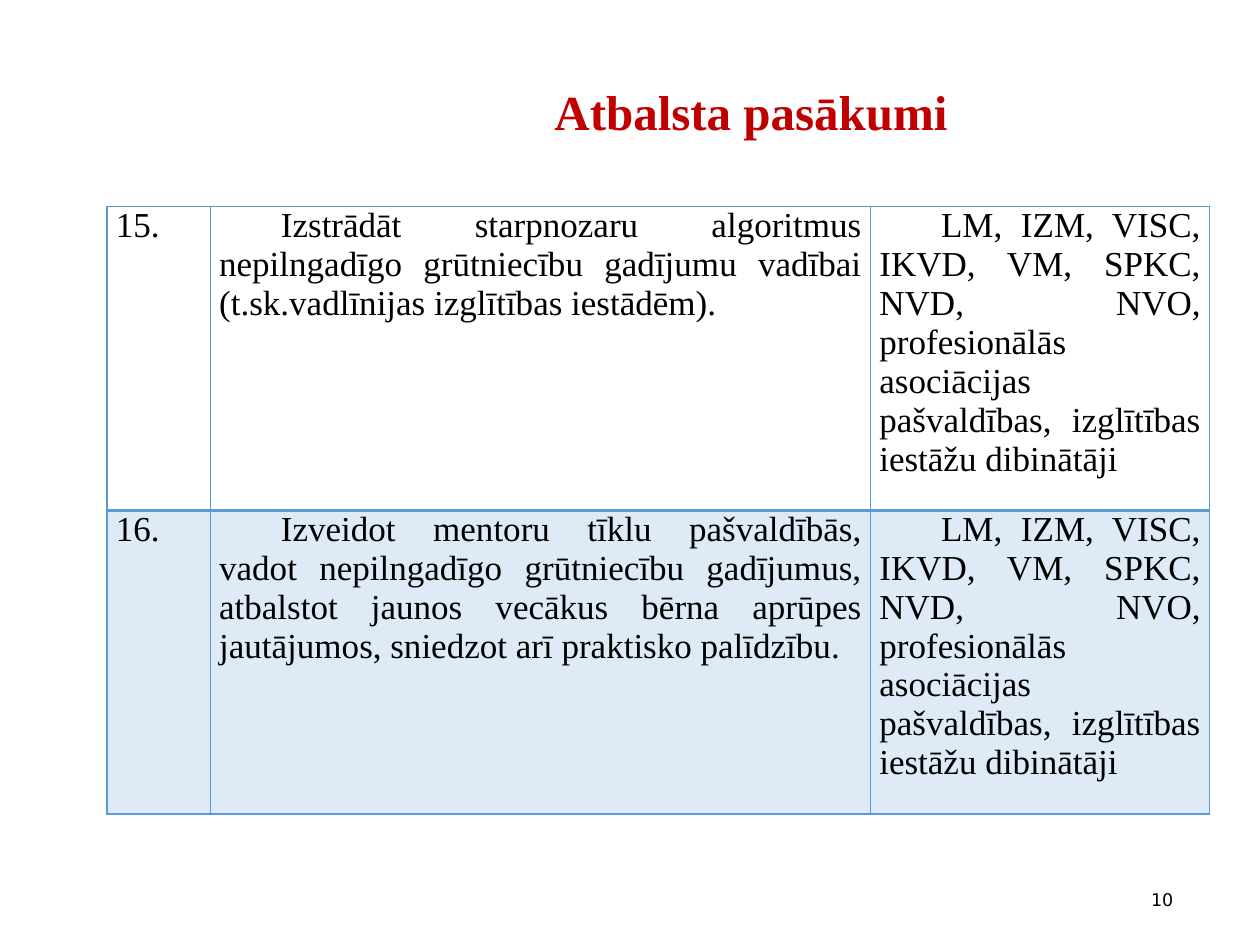
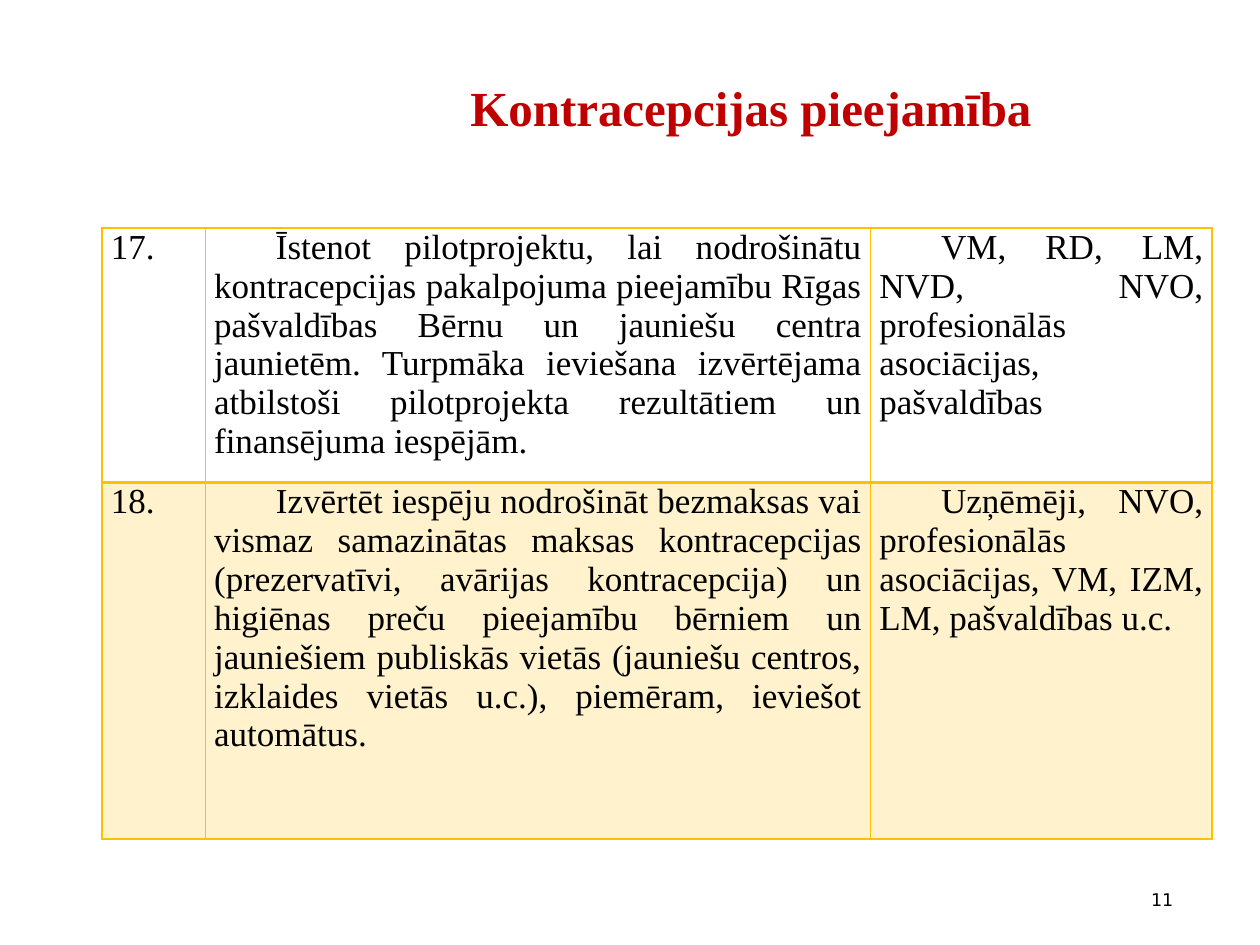
from pptx import Presentation
from pptx.dml.color import RGBColor
from pptx.enum.text import MSO_ANCHOR, MSO_AUTO_SIZE, PP_ALIGN
from pptx.oxml import parse_xml
from pptx.oxml.ns import nsdecls
from pptx.util import Inches, Pt

RED = RGBColor(0xC0, 0x00, 0x00)
BLACK = RGBColor(0x00, 0x00, 0x00)
BLUE = RGBColor(0x5B, 0x9B, 0xD5)
PALE_BLUE = RGBColor(0xDE, 0xEB, 0xF7)
GOLD = RGBColor(0xFF, 0xC0, 0x00)
PALE_GOLD = RGBColor(0xFF, 0xF2, 0xCC)
SERIF = "Times New Roman"
SANS = "DejaVu Sans"

SUPPORT_PARTNERS = ("LM, IZM, VISC, IKVD, VM, SPKC, NVD, NVO, profesionālās asociācijas "
                    "pašvaldības, izglītības iestāžu dibinātāji")
SUPPORT_ROWS = [
    ("15.", "Izstrādāt starpnozaru algoritmus nepilngadīgo grūtniecību gadījumu vadībai "
     "(t.sk.vadlīnijas izglītības iestādēm).", SUPPORT_PARTNERS),
    ("16.", "Izveidot mentoru tīklu pašvaldībās, vadot nepilngadīgo grūtniecību gadījumus, "
     "atbalstot jaunos vecākus bērna aprūpes jautājumos, sniedzot arī praktisko palīdzību.",
     SUPPORT_PARTNERS),
]
ACCESS_ROWS = [
    ("17.", "Īstenot pilotprojektu, lai nodrošinātu kontracepcijas pakalpojuma pieejamību "
     "Rīgas pašvaldības Bērnu un jauniešu centra jaunietēm. Turpmāka ieviešana izvērtējama "
     "atbilstoši pilotprojekta rezultātiem un finansējuma iespējām.",
     "VM, RD, LM, NVD, NVO, profesionālās asociācijas, pašvaldības"),
    ("18.", "Izvērtēt iespēju nodrošināt bezmaksas vai vismaz samazinātas maksas "
     "kontracepcijas (prezervatīvi, avārijas kontracepcija) un higiēnas preču pieejamību "
     "bērniem un jauniešiem publiskās vietās (jauniešu centros, izklaides vietās u.c.), "
     "piemēram, ieviešot automātus.",
     "Uzņēmēji, NVO, profesionālās asociācijas, VM, IZM, LM, pašvaldības u.c."),
]


def write(tf, text, size=20, font=SERIF, color=BLACK, bold=False,
          align=PP_ALIGN.JUSTIFY, indent=0, spacing=None):
    p = tf.paragraphs[0]
    p.alignment = align
    if spacing:
        p.line_spacing = spacing
    if indent:
        pPr = p._p.get_or_add_pPr()
        pPr.set("marL", "0")
        pPr.set("indent", str(Inches(indent)))
    r = p.add_run()
    r.text = text
    r.font.name = font
    r.font.size = Pt(size)
    r.font.bold = bold
    r.font.color.rgb = color


def add_title(s, text, top, height):
    sp = s.shapes.title
    sp.left, sp.top, sp.width, sp.height = map(Inches, (2.5, top, 6.92, height))
    tf = sp.text_frame
    tf.auto_size = MSO_AUTO_SIZE.NONE
    tf.vertical_anchor = MSO_ANCHOR.TOP
    write(tf, text, size=28, color=RED, bold=True, align=PP_ALIGN.CENTER, spacing=0.9)


def add_number(s, number):
    tf = s.shapes.add_textbox(*map(Inches, (8.56, 6.94, 0.85, 0.4))).text_frame
    tf.word_wrap = True
    tf.vertical_anchor = MSO_ANCHOR.MIDDLE
    write(tf, str(number), size=10, font=SANS, align=PP_ALIGN.RIGHT)


def set_borders(cell, color, top, bottom):
    tcPr = cell._tc.get_or_add_tcPr()
    widths = {"lnL": 1, "lnR": 1, "lnT": top, "lnB": bottom}
    for position, (side, width) in enumerate(widths.items()):
        tcPr.insert(position, parse_xml(
            f'<a:{side} {nsdecls("a")} w="{Pt(width)}"><a:solidFill>'
            f'<a:srgbClr val="{color}"/></a:solidFill></a:{side}>'))


def add_measures(s, rows, left, top, widths, heights, line, tint):
    table = s.shapes.add_table(len(rows), len(widths), Inches(left), Inches(top),
                               Inches(sum(widths)), Inches(sum(heights))).table
    table.first_row = table.horz_banding = False
    for column, width in zip(table.columns, widths):
        column.width = Inches(width)
    for i, (row, height) in enumerate(zip(rows, heights)):
        table.rows[i].height = Inches(height)
        for j, text in enumerate(row):
            cell = table.cell(i, j)
            cell.margin_left = cell.margin_right = Inches(0.07)
            cell.margin_top = cell.margin_bottom = 0
            if i % 2:
                cell.fill.solid()
                cell.fill.fore_color.rgb = tint
            else:
                cell.fill.background()
            set_borders(cell, line, top=2 if i else 1, bottom=1 if i else 2)
            write(cell.text_frame, text, indent=0.49 if j else 0)


def main():
    prs = Presentation()
    prs.slide_width, prs.slide_height = Inches(10), Inches(7.5)
    title_only = prs.slide_layouts[5]

    s = prs.slides.add_slide(title_only)
    add_title(s, "Atbalsta pasākumi", 0.65, 0.74)
    add_measures(s, SUPPORT_ROWS, 0.85, 1.64, (0.82, 5.24, 2.69), (2.41, 2.41),
                 BLUE, PALE_BLUE)
    add_number(s, 10)

    s = prs.slides.add_slide(title_only)
    add_title(s, "Kontracepcijas pieejamība", 0.62, 0.78)
    add_measures(s, ACCESS_ROWS, 0.81, 1.81, (0.82, 5.28, 2.71), (2.02, 2.83),
                 GOLD, PALE_GOLD)
    add_number(s, 11)

    prs.save("out.pptx")


if __name__ == "__main__":
    main()
